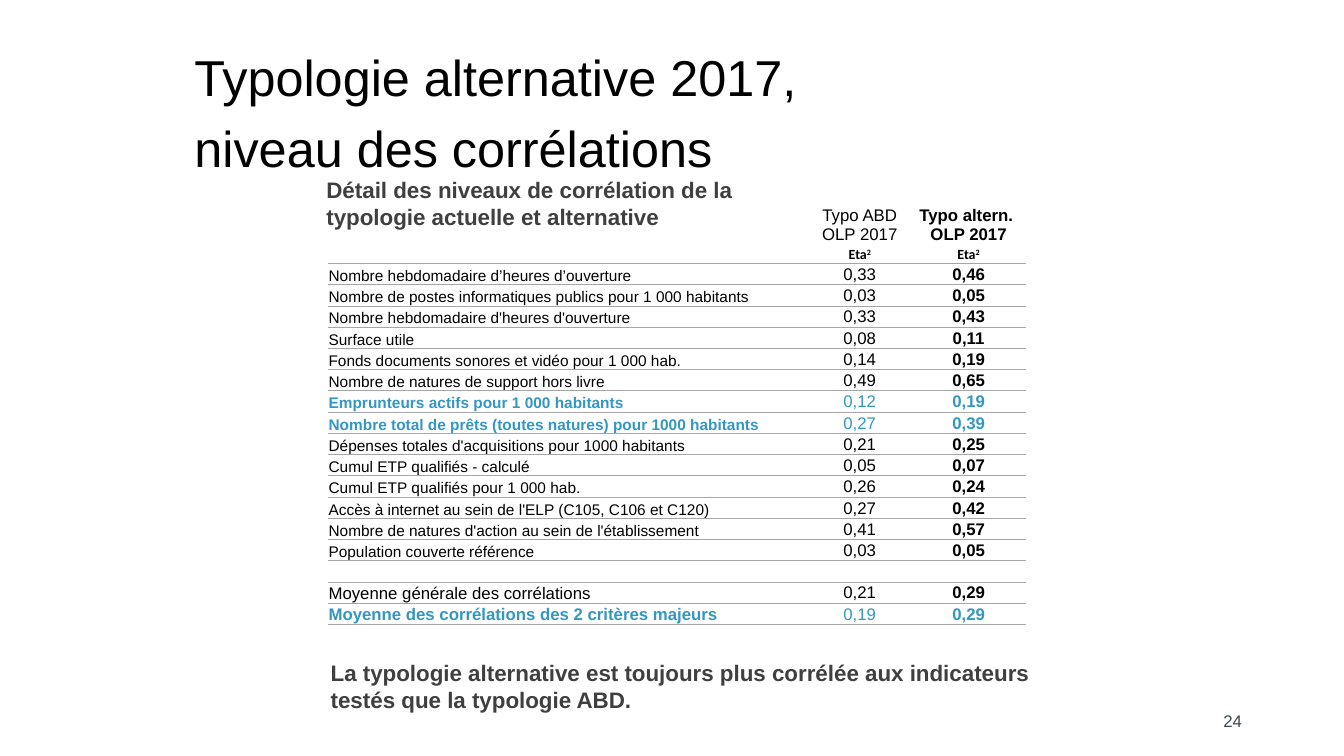
"""Build the slide on correlation levels of the 2017 typologies."""
from copy import deepcopy
from dataclasses import dataclass

from lxml import etree
from pptx import Presentation
from pptx import util as u
from pptx.dml.color import RGBColor
from pptx.enum import text
from pptx.oxml.ns import qn


@dataclass(frozen=True)
class Theme:
    font: str = "Arial"
    alt: str = "Calibri"
    black: str = "000000"
    dark: str = "3F3F3F"
    slate: str = "3C484D"
    blue: str = "3497C2"
    rule: str = "A6A6A6"
    title: float = 36
    lead: float = 16
    body: float = 12
    label: float = 11
    small: float = 10


@dataclass(frozen=True)
class Style:
    size: float
    color: str
    bold: bool = False
    font: str = "Arial"


@dataclass(frozen=True)
class Box:
    words: str
    left: float
    top: float
    width: float
    height: float
    style: Style
    inset: float = 7.2
    head: float = 3.6
    gap: float = 0
    align: text.PP_ALIGN = text.PP_ALIGN.LEFT
    anchor: text.MSO_ANCHOR = text.MSO_ANCHOR.TOP


@dataclass(frozen=True)
class Row:
    label: str
    now: str
    new: str
    major: bool = False
    total: bool = False


T = Theme()
LEAD = Style(T.lead, T.dark, True)
BOXES = [
    Box("24", 678.24, 500.4, 216, 28.8, Style(T.body, T.slate),
        align=text.PP_ALIGN.RIGHT, anchor=text.MSO_ANCHOR.MIDDLE),
    Box("Typologie alternative 2017,\nniveau des corrélations", 131.76, 25.92, 738.72, 99.36,
        Style(T.title, T.black), head=7.2, gap=7.2),
    Box("Détail des niveaux de corrélation de la typologie actuelle et alternative",
        226.08, 122.4, 335.52, 46.08, LEAD),
    Box("La typologie alternative est toujours plus corrélée aux indicateurs testés "
        "que la typologie ABD.", 200.88, 467.28, 547.92, 46.08, LEAD, inset=35.28),
]
ROWS = [
    Row("Nombre hebdomadaire d’heures d’ouverture", "0,33", "0,46"),
    Row("Nombre de postes informatiques publics pour 1 000 habitants", "0,03", "0,05"),
    Row("Nombre hebdomadaire d'heures d'ouverture", "0,33", "0,43"),
    Row("Surface utile", "0,08", "0,11"),
    Row("Fonds documents sonores et vidéo pour 1 000 hab.", "0,14", "0,19"),
    Row("Nombre de natures de support hors livre", "0,49", "0,65"),
    Row("Emprunteurs actifs pour 1 000 habitants", "0,12", "0,19", major=True),
    Row("Nombre total de prêts (toutes natures) pour 1000 habitants", "0,27", "0,39", major=True),
    Row("Dépenses totales d'acquisitions pour 1000 habitants", "0,21", "0,25"),
    Row("Cumul ETP qualifiés - calculé", "0,05", "0,07"),
    Row("Cumul ETP qualifiés pour 1 000 hab.", "0,26", "0,24"),
    Row("Accès à internet au sein de l'ELP (C105, C106 et C120)", "0,27", "0,42"),
    Row("Nombre de natures d'action au sein de l'établissement", "0,41", "0,57"),
    Row("Population couverte référence", "0,03", "0,05"),
    Row("", "", ""),
    Row("Moyenne générale des corrélations", "0,21", "0,29", total=True),
    Row("Moyenne des corrélations des 2 critères majeurs", "0,19", "0,29", major=True, total=True),
]
HEADS = ["", "Typo ABD\vOLP 2017", "Typo altern. \vOLP 2017"]
COLS = [343.44, 73.44, 82.08]
TOPS = [29.8, 13]
STEP = 15.18
GRID = "{2D5ABB26-0587-4C30-8999-92F81FD0307C}"


def paint(run, style: Style) -> None:
    """Apply a text style to one run."""
    run.font.size = u.Pt(style.size)
    run.font.name = style.font
    run.font.bold = style.bold
    run.font.color.rgb = RGBColor.from_string(style.color)


def place(slide, box: Box) -> None:
    """Draw a text box."""
    frame = slide.shapes.add_textbox(
        u.Pt(box.left), u.Pt(box.top), u.Pt(box.width), u.Pt(box.height)).text_frame
    frame.word_wrap = True
    frame.vertical_anchor = box.anchor
    frame.margin_left, frame.margin_right = u.Pt(box.inset), u.Pt(7.2)
    frame.margin_top, frame.margin_bottom = u.Pt(box.head), u.Pt(3.6)
    frame.text = box.words
    for i, para in enumerate(frame.paragraphs):
        para.alignment = box.align
        if i and box.gap:
            para.space_before = u.Pt(box.gap)
        for run in para.runs:
            paint(run, box.style)


def edge(cell, side: str) -> None:
    """Rule one side of a cell."""
    line = etree.SubElement(cell._tc.get_or_add_tcPr(), qn(f"a:{side}"), w=str(u.Pt(0.75)))
    fill = etree.SubElement(line, qn("a:solidFill"))
    etree.SubElement(fill, qn("a:srgbClr"), val=T.rule)


def write(cell, words: str, style: Style, first: bool, sides: list[str]) -> None:
    """Fill and format a table cell."""
    for side in sides:
        edge(cell, side)
    cell.fill.background()
    cell.margin_left = cell.margin_right = cell.margin_top = u.Pt(0.72)
    cell.margin_bottom = 0
    cell.vertical_anchor = text.MSO_ANCHOR.BOTTOM if first else text.MSO_ANCHOR.MIDDLE
    cell.text_frame.text = words
    para = cell.text_frame.paragraphs[0]
    para.alignment = text.PP_ALIGN.LEFT if first else text.PP_ALIGN.CENTER
    for run in para.runs:
        paint(run, style)
    for brk in para._p.findall(qn("a:br")):
        brk.insert(0, deepcopy(para.runs[0].font._element))
    if not words:
        para._p.get_or_add_endParaRPr().set("sz", str(int(T.small * 100)))


def table(slide) -> None:
    """Draw the table of correlations."""
    high = TOPS + [STEP] * len(ROWS)
    frame = slide.shapes.add_table(
        len(high), len(COLS), u.Pt(234), u.Pt(145.44), u.Pt(sum(COLS)), u.Pt(sum(high)))
    grid = frame.table
    grid.first_row = grid.horz_banding = False
    grid._tbl.tblPr.find(qn("a:tableStyleId")).text = GRID
    for col, width in zip(grid.columns, COLS):
        col.width = u.Pt(width)
    for row, height in zip(grid.rows, high):
        row.height = u.Pt(height)
    for c, head in enumerate(HEADS):
        write(grid.cell(0, c), head, Style(T.body, T.black, c == 2), c == 0, [])
        unit = Style(T.small, T.black, True, T.alt)
        cell = grid.cell(1, c)
        write(cell, "Eta" if c else "", unit, c == 0, ["lnB"])
        if c:
            power = cell.text_frame.paragraphs[0].add_run()
            power.text = "2"
            paint(power, unit)
            power.font._element.set("baseline", "30000")
    for r, row in enumerate(ROWS, len(TOPS)):
        color = T.blue if row.major else T.black
        size = T.body if row.total else T.label
        styles = [Style(size, color, row.major), Style(T.body, color), Style(T.body, color, True)]
        for c, words in enumerate([row.label, row.now, row.new]):
            write(grid.cell(r, c), words, styles[c], c == 0, ["lnT", "lnB"])


def main() -> None:
    """Build and save the deck."""
    deck = Presentation()
    deck.slide_width, deck.slide_height = u.Pt(960), u.Pt(540)
    slide = deck.slides.add_slide(deck.slide_layouts[6])
    table(slide)
    for box in BOXES:
        place(slide, box)
    deck.save("out.pptx")


if __name__ == "__main__":
    main()
